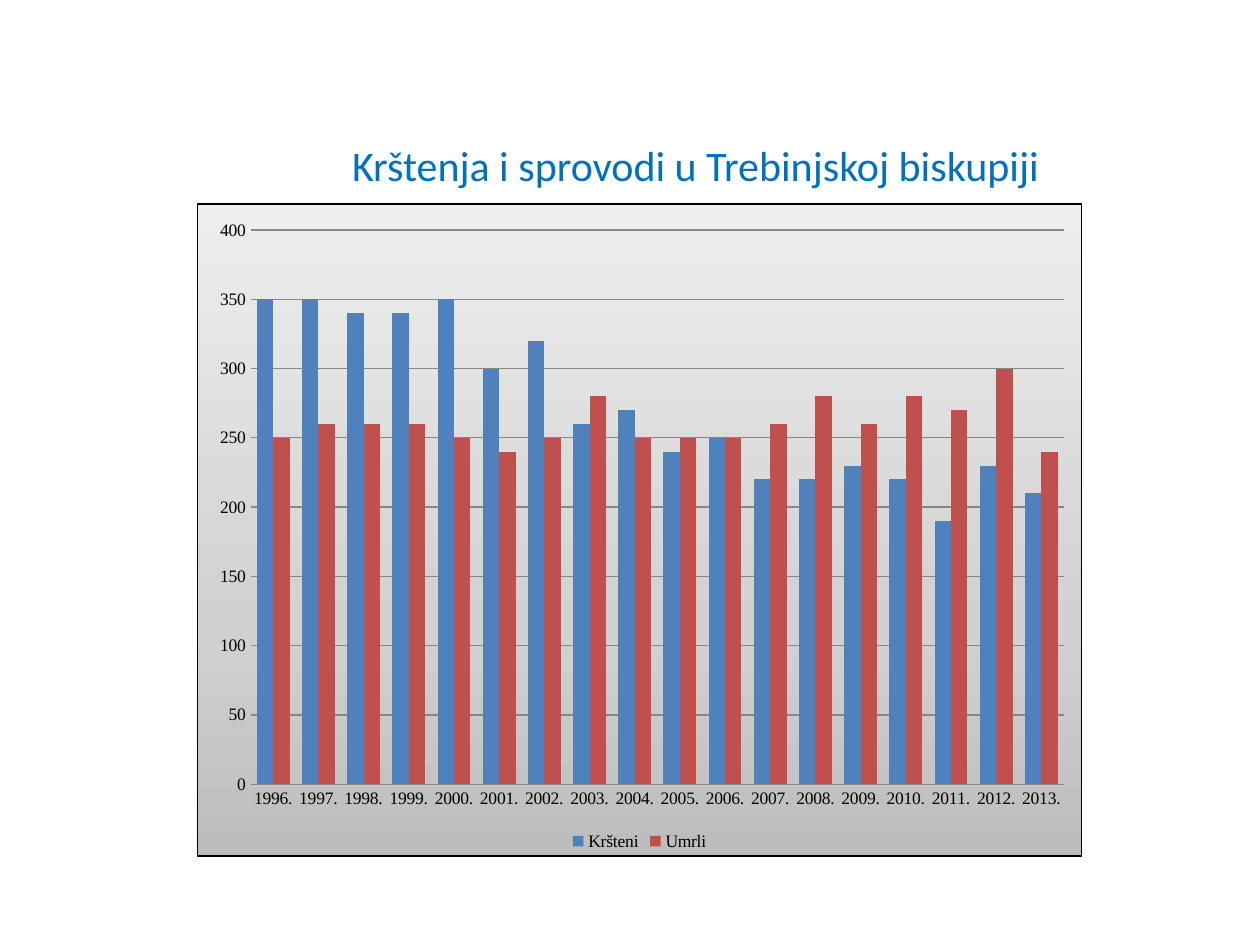
from dataclasses import dataclass

import lxml.etree
import pptx
import pptx.chart.data
import pptx.dml.color
import pptx.enum.chart
import pptx.enum.text
import pptx.oxml
import pptx.oxml.ns
import pptx.util

Cm = pptx.util.Cm
Pt = pptx.util.Pt


@dataclass(frozen=True)
class Theme:
    head: str = "0070C0"
    ink: str = "000000"
    grid: str = "868686"
    bars: tuple = ("4F81BD", "C0504D")
    fade: tuple = ((0, "BDBDBD"), (35, "D1D1D1"), (100, "EEEEEE"))
    sans: str = "Calibri"
    serif: str = "Times New Roman"
    big: int = 24
    small: int = 10


THEME = Theme()
YEARS = [f"{year}." for year in range(1996, 2014)]
SERIES = {
    "Kršteni": (350, 350, 340, 340, 350, 300, 320, 260, 270,
                240, 250, 220, 220, 230, 220, 190, 230, 210),
    "Umrli": (250, 260, 260, 260, 250, 240, 250, 280, 250,
              250, 250, 260, 280, 260, 280, 270, 300, 240),
}


def rgb(code):
    return pptx.dml.color.RGBColor.from_string(code)


def style(font, face, size, code):
    font.name = face
    font.size = Pt(size)
    font.color.rgb = rgb(code)


def add_title(slide, text):
    title = slide.shapes.title
    title.left, title.top = Cm(3.2), Cm(1.73)
    title.width, title.height = Cm(21.64), Cm(3.18)
    frame = title.text_frame
    frame.word_wrap = True
    frame.vertical_anchor = pptx.enum.text.MSO_ANCHOR.MIDDLE
    para = frame.paragraphs[0]
    para.alignment = pptx.enum.text.PP_ALIGN.CENTER
    run = para.add_run()
    run.text = text
    style(run.font, THEME.sans, THEME.big, THEME.head)


def set_back(chart):
    stops = "".join(
        f'<a:gs pos="{pos * 1000}"><a:srgbClr val="{code}"/></a:gs>'
        for pos, code in THEME.fade
    )
    back = pptx.oxml.parse_xml(
        f'<c:spPr {pptx.oxml.ns.nsdecls("c", "a")}>'
        f'<a:gradFill><a:gsLst>{stops}</a:gsLst>'
        '<a:lin ang="16200000" scaled="0"/></a:gradFill>'
        f'<a:ln w="{Pt(0.75)}"><a:solidFill><a:srgbClr val="{THEME.ink}"/>'
        '</a:solidFill></a:ln></c:spPr>'
    )
    root = chart.element
    root.find(pptx.oxml.ns.qn("c:chart")).addnext(back)


def set_plot(chart, x, y, w, h):
    qn = pptx.oxml.ns.qn
    area = chart.element.find(".//" + qn("c:plotArea"))
    old = area.find(qn("c:layout"))
    if old is not None:
        area.remove(old)
    box = lxml.etree.Element(qn("c:layout"))
    inner = lxml.etree.SubElement(box, qn("c:manualLayout"))
    parts = (("layoutTarget", "inner"), ("xMode", "edge"), ("yMode", "edge"),
             ("x", x), ("y", y), ("w", w), ("h", h))
    for name, val in parts:
        lxml.etree.SubElement(inner, qn(f"c:{name}")).set("val", str(val))
    area.insert(0, box)


def set_axes(chart):
    none = pptx.enum.chart.XL_TICK_MARK.NONE
    cat, val = chart.category_axis, chart.value_axis
    for axis in (cat, val):
        axis.major_tick_mark = none
        axis.minor_tick_mark = none
    cat.format.line.color.rgb = rgb(THEME.grid)
    val.format.line.fill.background()
    val.minimum_scale, val.maximum_scale, val.major_unit = 0, 400, 50
    val.has_major_gridlines = True
    grid = val.major_gridlines.format.line
    grid.color.rgb = rgb(THEME.grid)
    grid.width = Pt(0.75)
    val.tick_labels.number_format = "#,##0"
    val.tick_labels.number_format_is_linked = False


def add_bars(slide):
    data = pptx.chart.data.CategoryChartData()
    data.categories = YEARS
    for name, vals in SERIES.items():
        data.add_series(name, vals)
    kind = pptx.enum.chart.XL_CHART_TYPE.COLUMN_CLUSTERED
    chart = slide.shapes.add_chart(
        kind, Cm(3.97), Cm(4.1), Cm(17.85), Cm(13.17), data
    ).chart
    chart.has_title = False
    style(chart.font, THEME.serif, THEME.small, THEME.ink)
    chart.has_legend = True
    chart.legend.position = pptx.enum.chart.XL_LEGEND_POSITION.BOTTOM
    chart.legend.include_in_layout = False
    plot = chart.plots[0]
    plot.gap_width, plot.overlap = 75, 0
    plot.vary_by_categories = False
    for line, code in zip(plot.series, THEME.bars):
        line.format.fill.solid()
        line.format.fill.fore_color.rgb = rgb(code)
    set_axes(chart)
    set_plot(chart, 0.06, 0.04, 0.92, 0.85)
    set_back(chart)


def main():
    deck = pptx.Presentation()
    deck.slide_width, deck.slide_height = Cm(25.4), Cm(19.05)
    slide = deck.slides.add_slide(deck.slide_layouts[5])
    add_title(slide, "Krštenja i sprovodi u Trebinjskoj biskupiji")
    add_bars(slide)
    deck.save("out.pptx")


if __name__ == "__main__":
    main()
